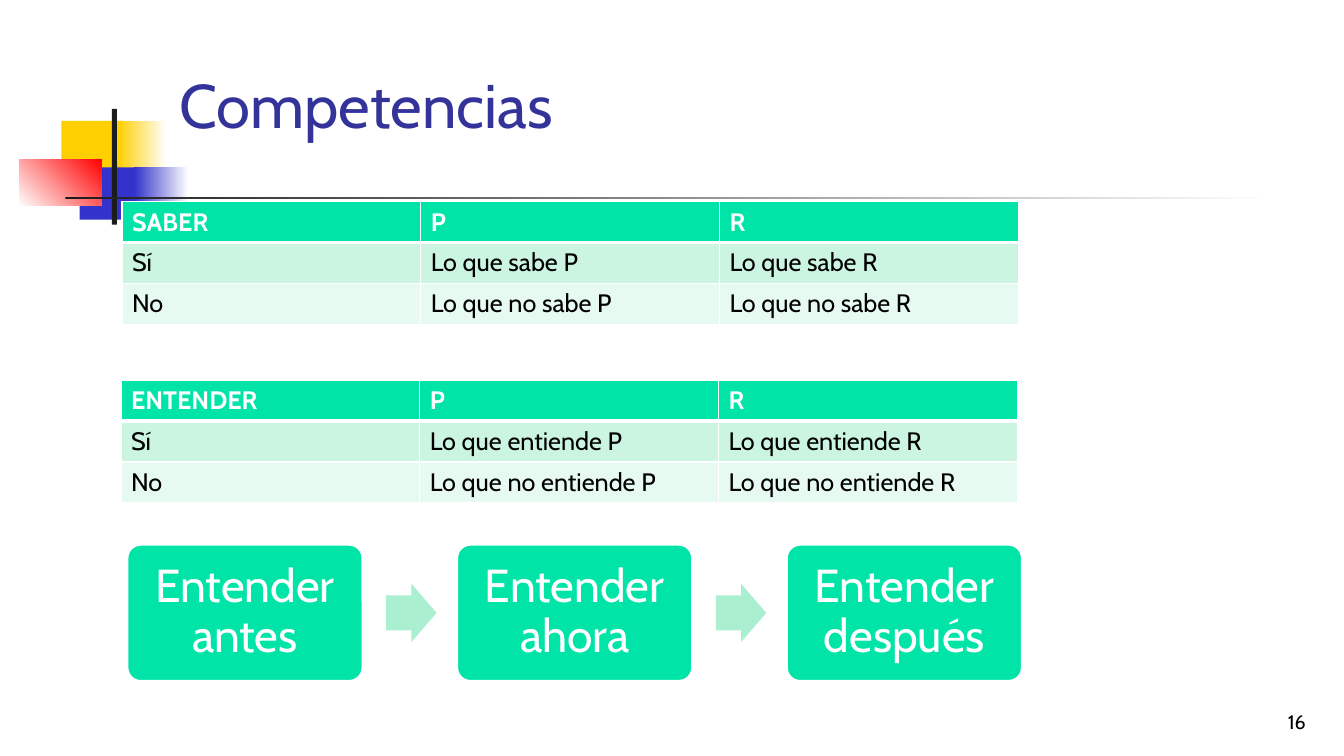
import pptx
import pptx.util
import pptx.dml.color
import pptx.enum.shapes
import pptx.enum.text
import pptx.oxml
import pptx.oxml.ns

Inches = pptx.util.Inches
Pt = pptx.util.Pt
Shape = pptx.enum.shapes.MSO_SHAPE
Align = pptx.enum.text.PP_ALIGN
Anchor = pptx.enum.text.MSO_ANCHOR


def color(hex_code):
    return pptx.dml.color.RGBColor.from_string(hex_code)


class SlideBuilder:
    """Draws styled elements on the current slide."""

    font = "Cabin"
    accent = "00E4A8"
    pale_accent = "ABEFD1"
    row_fills = ("00E4A8", "CCF5E1", "E7FAF1")

    def __init__(self, slide):
        self.slide = slide

    def add_run(self, paragraph, text, size, ink, bold=False):
        run = paragraph.add_run()
        run.text = text
        run.font.name = self.font
        run.font.size = Pt(size)
        run.font.bold = bold
        run.font.color.rgb = color(ink)

    def text(self, box, text, size, ink, anchor, align=Align.LEFT):
        frame = self.slide.shapes.add_textbox(*map(Inches, box)).text_frame
        frame.word_wrap = True
        frame.vertical_anchor = anchor
        frame.paragraphs[0].alignment = align
        self.add_run(frame.paragraphs[0], text, size, ink)

    def shape(self, kind, box, fill, adjustments=()):
        shape = self.slide.shapes.add_shape(kind, *map(Inches, box))
        shape.shadow.inherit = False
        shape.fill.solid()
        shape.fill.fore_color.rgb = color(fill)
        shape.line.fill.background()
        for index, value in enumerate(adjustments):
            shape.adjustments[index] = value
        return shape

    def fade(self, box, start, end, angle=0):
        fill = self.shape(Shape.RECTANGLE, box, start).fill
        fill.gradient()
        fill.gradient_angle = angle
        for stop, hex_code, position in zip(fill.gradient_stops, (start, end), (0, 1)):
            stop.color.rgb = color(hex_code)
            stop.position = position

    def step(self, box, text):
        card = self.shape(Shape.ROUNDED_RECTANGLE, box, self.accent, [0.1])
        card.line.color.rgb = color("FFFFFF")
        card.line.width = Pt(2)
        frame = card.text_frame
        frame.word_wrap = True
        frame.vertical_anchor = Anchor.MIDDLE
        frame.margin_left = frame.margin_right = Inches(0.14)
        frame.margin_top = frame.margin_bottom = Inches(0.14)
        frame.paragraphs[0].alignment = Align.CENTER
        frame.paragraphs[0].line_spacing = 0.9
        self.add_run(frame.paragraphs[0], text, 33, "FFFFFF")

    def cell_borders(self, cell, bottom_width):
        properties = cell._tc.get_or_add_tcPr()
        widths = {"lnL": 1, "lnR": 1, "lnT": 1, "lnB": bottom_width}
        for index, (side, width) in enumerate(widths.items()):
            properties.insert(index, pptx.oxml.parse_xml(
                f'<a:{side} {pptx.oxml.ns.nsdecls("a")} w="{Pt(width)}">'
                f'<a:solidFill><a:srgbClr val="FFFFFF"/></a:solidFill></a:{side}>'))

    def table(self, left, top, rows):
        table = self.slide.shapes.add_table(
            len(rows), len(rows[0]), Inches(left), Inches(top),
            Inches(8.89), Inches(1.22)).table
        for column in table.columns:
            column.width = Inches(8.89 / len(rows[0]))
        for row_index, texts in enumerate(rows):
            table.rows[row_index].height = Inches(1.22 / len(rows))
            header = row_index == 0
            for column_index, text in enumerate(texts):
                cell = table.cell(row_index, column_index)
                cell.fill.solid()
                cell.fill.fore_color.rgb = color(self.row_fills[row_index])
                self.cell_borders(cell, 3 if header else 1)
                self.add_run(cell.text_frame.paragraphs[0], text, 18,
                             "FFFFFF" if header else "000000", header)


def main():
    deck = pptx.Presentation()
    deck.slide_width = Inches(13.33)
    deck.slide_height = Inches(7.5)
    page = SlideBuilder(deck.slides.add_slide(deck.slide_layouts[6]))

    page.shape(Shape.RECTANGLE, (0.61, 1.2, 0.64, 0.52), "FFCF01")
    page.fade((1.17, 1.2, 0.48, 0.52), "FFCF01", "FFFFFF")
    page.shape(Shape.RECTANGLE, (0.79, 1.66, 0.62, 0.52), "3333CC")
    page.fade((1.33, 1.66, 0.54, 0.52), "3333CC", "FFFFFF")
    page.fade((0.19, 1.58, 0.82, 0.46), "FFFFFF", "FF0000", 45)
    page.shape(Shape.RECTANGLE, (1.11, 1.08, 0.05, 1.15), "1C1C1C")
    page.fade((0.65, 1.95, 12, 0.03), "1C1C1C", "FFFFFF")

    page.text((1.68, 0.23, 11.36, 1.6), "Competencias", 44, "333399", Anchor.MIDDLE)
    page.text((10.27, 6.83, 2.78, 0.5), "16", 14, "000000", Anchor.BOTTOM, Align.RIGHT)

    competences = (("SABER", "sabe", 1.21, 2), ("ENTENDER", "entiende", 1.2, 3.77))
    for heading, verb, left, top in competences:
        page.table(left, top, [
            (heading, "P", "R"),
            ("Sí", f"Lo que {verb} P", f"Lo que {verb} R"),
            ("No", f"Lo que no {verb} P", f"Lo que no {verb} R")])

    moments = ("antes", "ahora", "después")
    for index, moment in enumerate(moments):
        left = 1.26 + 3.27 * index
        page.step((left, 5.4, 2.34, 1.36), f"Entender {moment}")
        if index < len(moments) - 1:
            page.shape(Shape.RIGHT_ARROW, (left + 2.57, 5.79, 0.5, 0.58),
                       page.pale_accent, [0.6, 0.5])

    deck.save("out.pptx")


if __name__ == "__main__":
    main()
